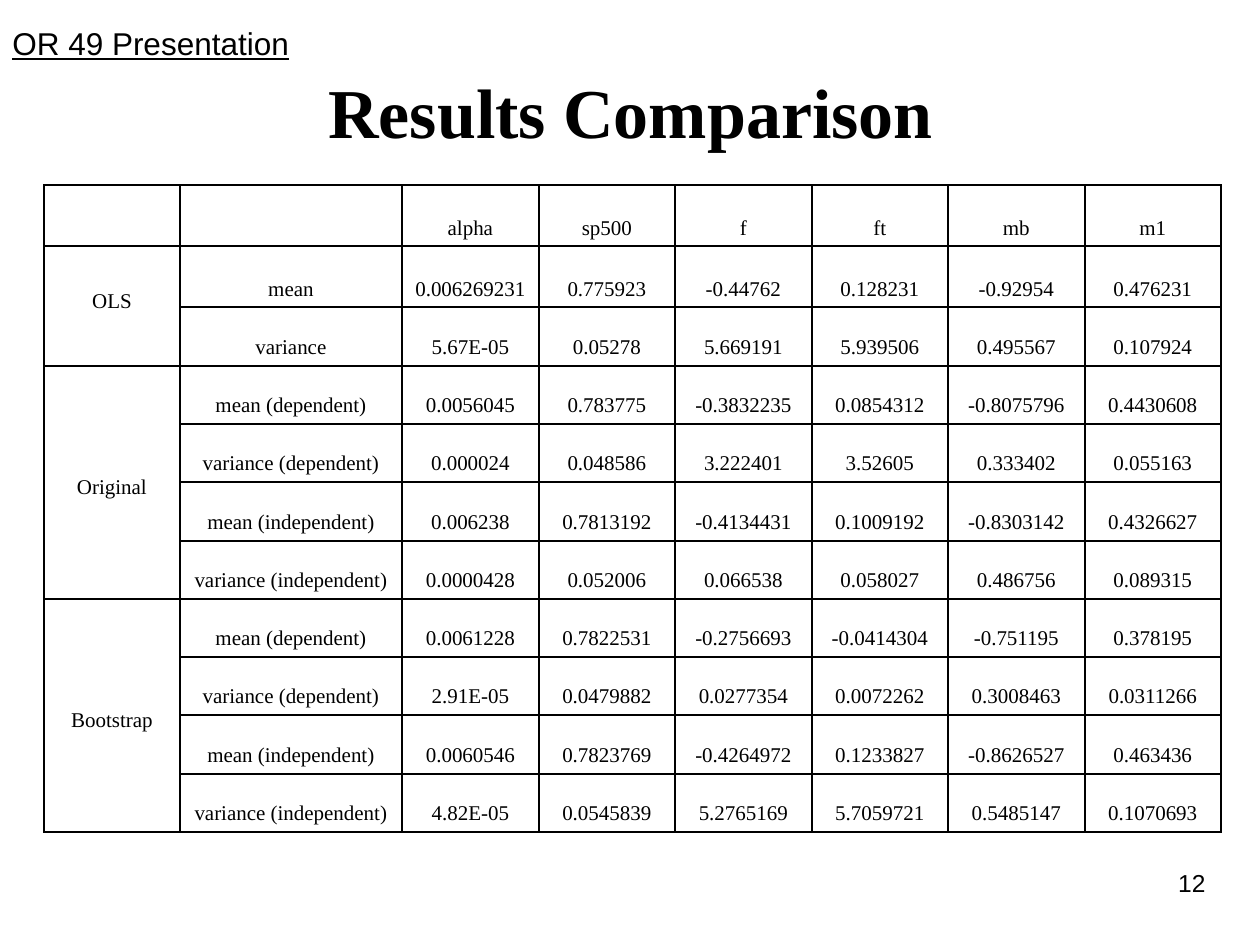
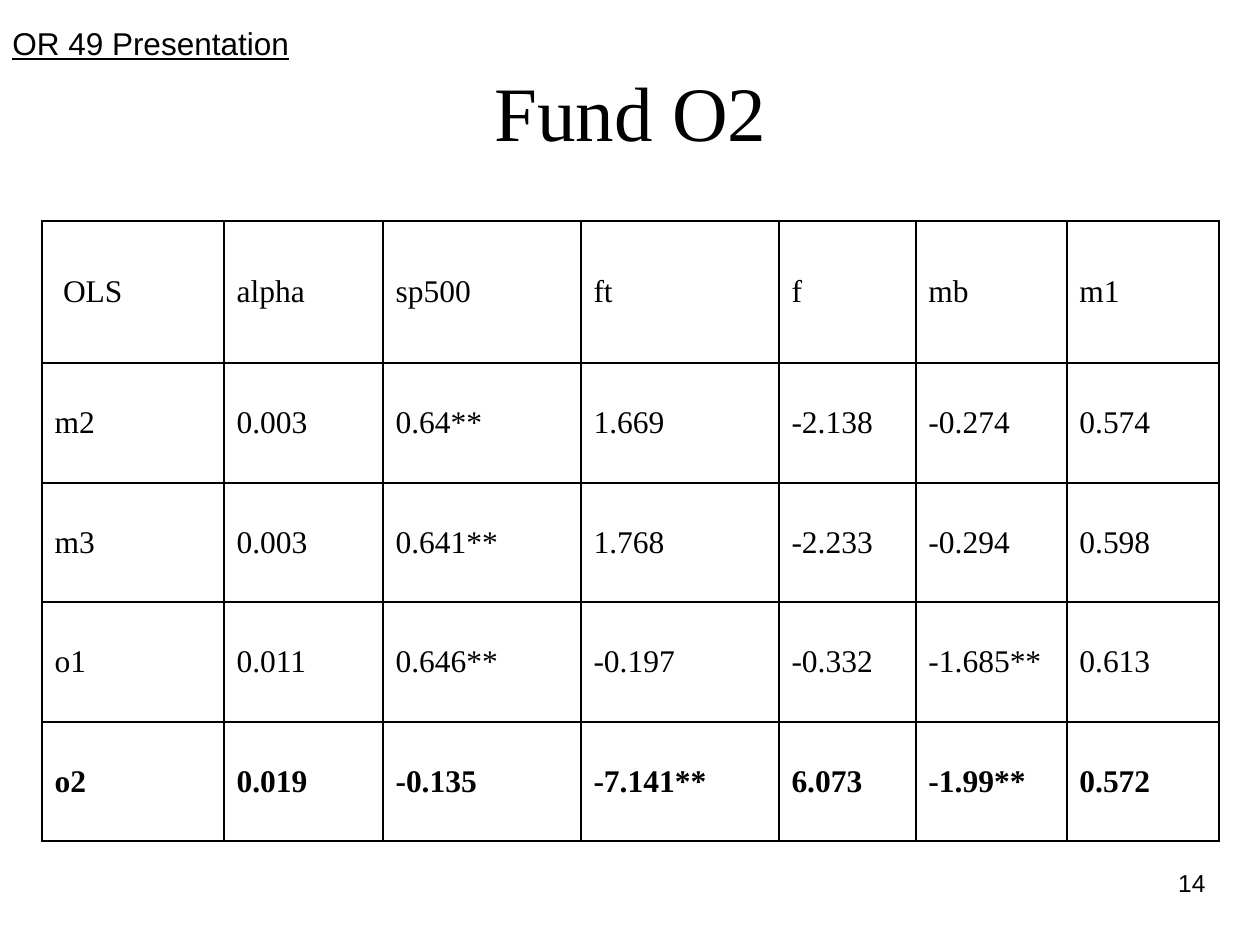
from lxml import etree
from pptx import Presentation
from pptx.dml.color import RGBColor
from pptx.enum import text
from pptx.oxml.ns import qn
from pptx.util import Emu, Pt

PX = 914400 / 126
BLACK = RGBColor(0x00, 0x00, 0x00)
WHITE = RGBColor(0xFF, 0xFF, 0xFF)
SERIF, SANS = "Times New Roman", "Arial"
LEFT, CENTER, RIGHT = text.PP_ALIGN.LEFT, text.PP_ALIGN.CENTER, text.PP_ALIGN.RIGHT
MIDDLE, BOTTOM = text.MSO_ANCHOR.MIDDLE, text.MSO_ANCHOR.BOTTOM


def px(n):
    return Emu(round(n * PX))


def write(tf, words, size, font=SERIF, align=LEFT, bold=False, underline=False, hang=0):
    p = tf.paragraphs[0]
    p.alignment = align
    if hang:
        pPr = p._p.get_or_add_pPr()
        pPr.set("marL", str(px(hang)))
        pPr.set("indent", str(-px(hang)))
    r = p.add_run()
    r.text = words
    r.font.name, r.font.size = font, Pt(size)
    r.font.bold, r.font.underline = bold, underline
    r.font.color.rgb = BLACK


# Contents of the two slides
comparison = [
    ["", "", "alpha", "sp500", "f", "ft", "mb", "m1"],
    ["OLS", "mean", "0.006269231", "0.775923", "-0.44762", "0.128231", "-0.92954", "0.476231"],
    ["", "variance", "5.67E-05", "0.05278", "5.669191", "5.939506", "0.495567", "0.107924"],
    ["Original", "mean (dependent)", "0.0056045", "0.783775", "-0.3832235", "0.0854312",
     "-0.8075796", "0.4430608"],
    ["", "variance (dependent)", "0.000024", "0.048586", "3.222401", "3.52605",
     "0.333402", "0.055163"],
    ["", "mean (independent)", "0.006238", "0.7813192", "-0.4134431", "0.1009192",
     "-0.8303142", "0.4326627"],
    ["", "variance (independent)", "0.0000428", "0.052006", "0.066538", "0.058027",
     "0.486756", "0.089315"],
    ["Bootstrap", "mean (dependent)", "0.0061228", "0.7822531", "-0.2756693", "-0.0414304",
     "-0.751195", "0.378195"],
    ["", "variance (dependent)", "2.91E-05", "0.0479882", "0.0277354", "0.0072262",
     "0.3008463", "0.0311266"],
    ["", "mean (independent)", "0.0060546", "0.7823769", "-0.4264972", "0.1233827",
     "-0.8626527", "0.463436"],
    ["", "variance (independent)", "4.82E-05", "0.0545839", "5.2765169", "5.7059721",
     "0.5485147", "0.1070693"],
]
fund = [
    ["OLS", "alpha", "sp500", "ft", "f", "mb", "m1"],
    ["m2", "0.003", "0.64**", "1.669", "-2.138", "-0.274", "0.574"],
    ["m3", "0.003", "0.641**", "1.768", "-2.233", "-0.294", "0.598"],
    ["o1", "0.011", "0.646**", "-0.197", "-0.332", "-1.685**", "0.613"],
    ["o2", "0.019", "-0.135", "-7.141**", "6.073", "-1.99**", "0.572"],
]
pages = [
    dict(title="Results Comparison", title_size=40, title_bold=True, number="12",
         rows=comparison, left=44, top=185,
         widths=[136, 222] + [137, 136] * 3,
         heights=[61, 61, 59, 58, 58, 59, 58, 58, 58, 59, 58],
         anchor=BOTTOM, groups=[(1, 2), (3, 6), (7, 10)], bold_row=None,
         style=dict(size=12, align=CENTER, hang=48)),
    dict(title="Fund O2", title_size=44, title_bold=False, number="14",
         rows=fund, left=42, top=221,
         widths=[182, 159, 198, 198, 137, 151, 152],
         heights=[142, 120, 119, 120, 119],
         anchor=MIDDLE, groups=[], bold_row=4,
         style=dict(size=18)),
]

prs = Presentation()
prs.slide_width, prs.slide_height = px(1260), px(945)

for page in pages:
    s = prs.slides.add_slide(prs.slide_layouts[5])
    s.background.fill.solid()
    s.background.fill.fore_color.rgb = WHITE

    # Title
    sp = s.shapes.title
    sp.left, sp.top, sp.width, sp.height = px(42), px(32), px(1177), px(158)
    sp.text_frame.vertical_anchor = MIDDLE
    write(sp.text_frame, page["title"], page["title_size"], align=CENTER,
          bold=page["title_bold"])

    # Running header and page number
    for box, words, style in [
        ((0, 18, 590, 113), "OR 49 Presentation", dict(size=18, underline=True)),
        ((903, 862, 315, 65), page["number"], dict(size=14, align=RIGHT)),
    ]:
        tf = s.shapes.add_textbox(*map(px, box)).text_frame
        tf.word_wrap = True
        write(tf, words, font=SANS, **style)

    # Table grid
    rows, widths, heights = page["rows"], page["widths"], page["heights"]
    table = s.shapes.add_table(len(rows), len(widths), px(page["left"]), px(page["top"]),
                               px(sum(widths)), px(sum(heights))).table
    table.first_row = table.horz_banding = False
    for col, width in zip(table.columns, widths):
        col.width = px(width)
    for row, height in zip(table.rows, heights):
        row.height = px(height)

    # Cells: text, black borders, no fill
    for i, row in enumerate(rows):
        for j, words in enumerate(row):
            cell = table.cell(i, j)
            cell.vertical_anchor = page["anchor"]
            if words:
                write(cell.text_frame, words, bold=i == page["bold_row"], **page["style"])
            tcPr = cell._tc.get_or_add_tcPr()
            for side in ("lnL", "lnR", "lnT", "lnB"):
                ln = etree.SubElement(tcPr, qn("a:" + side), w=str(Pt(1)))
                fill = etree.SubElement(ln, qn("a:solidFill"))
                etree.SubElement(fill, qn("a:srgbClr"), val=str(BLACK))
            cell.fill.background()

    # Row groups span several rows, with their names near the middle
    for first, last in page["groups"]:
        cell = table.cell(first, 0)
        cell.merge(table.cell(last, 0))
        cell.vertical_anchor = MIDDLE
        if last - first == 1:
            cell.margin_bottom = px(16)
        else:
            cell.margin_top = px(16)
    if not page["groups"]:
        table.cell(0, 0).margin_left = px(21)

prs.save("out.pptx")
